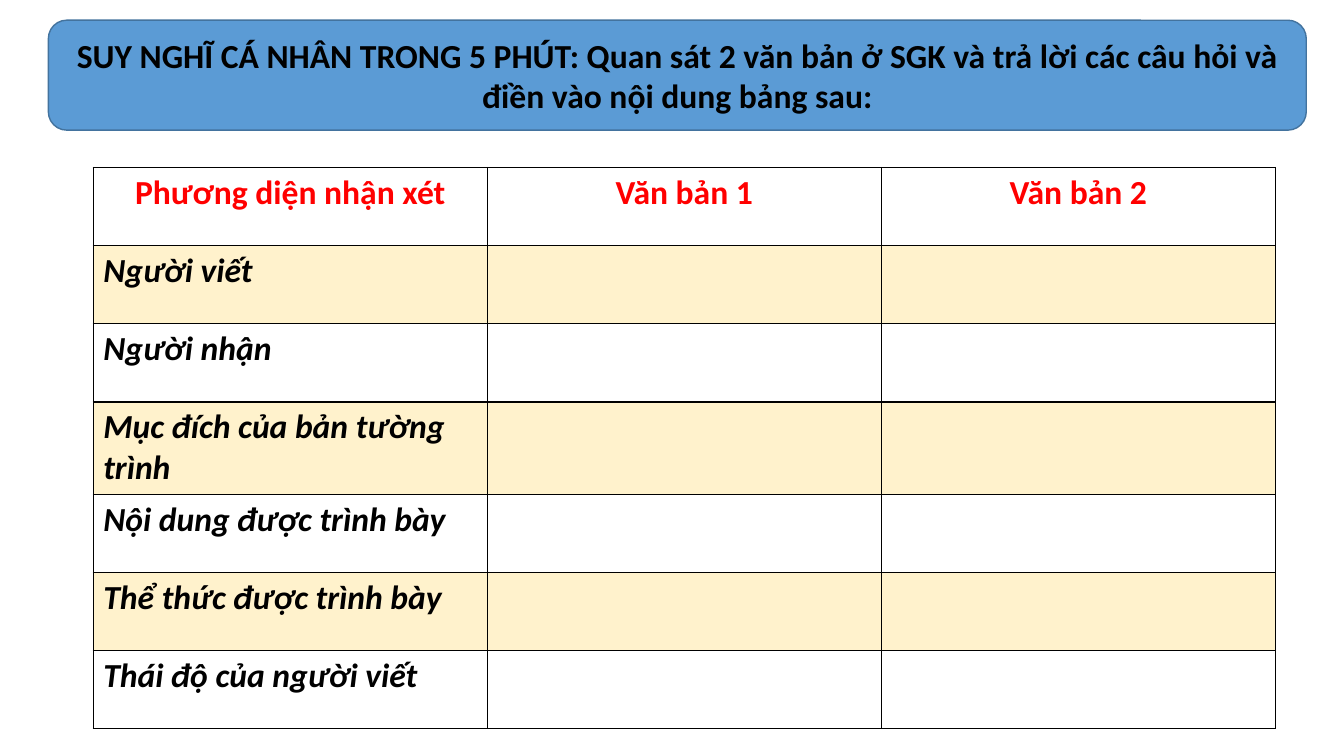
import pptx
import pptx.util
import pptx.dml.color
import pptx.enum.shapes
import pptx.enum.text
import pptx.oxml
import pptx.oxml.ns
from pptx.util import Cm

# Content
TITLE = ("SUY NGHĨ CÁ NHÂN TRONG 5 PHÚT: Quan sát 2 văn bản ở SGK "
         "và trả lời các câu hỏi và điền vào nội dung bảng sau:")
HEADS = ["Phương diện nhận xét", "Văn bản 1", "Văn bản 2"]
ASPECTS = [
    "Người viết",
    "Người nhận",
    "Mục đích của bản tường trình",
    "Nội dung được trình bày",
    "Thể thức được trình bày",
    "Thái độ của người viết",
]
BLACK, RED, AMBER = "000000", "FF0000", "FFC000"
COL_W, ROW_H = Cm(9.93), Cm(1.97)
ALIGN = pptx.enum.text.PP_ALIGN


def color(code):
    return pptx.dml.color.RGBColor.from_string(code)


def write(frame, text, ink=BLACK, italic=False, align=ALIGN.LEFT):
    para = frame.paragraphs[0]
    para.alignment = align
    run = para.add_run()
    run.text = text
    font = run.font
    font.name, font.size = "Calibri", pptx.util.Pt(24)
    font.bold, font.italic = True, italic
    font.color.rgb = color(ink)


def border(cell):
    props = cell._tc.get_or_add_tcPr()
    for spot, side in enumerate(("lnL", "lnR", "lnT", "lnB")):
        props.insert(spot, pptx.oxml.parse_xml(
            f'<a:{side} {pptx.oxml.ns.nsdecls("a")} w="12700"><a:solidFill>'
            f'<a:srgbClr val="{BLACK}"/></a:solidFill></a:{side}>'))


def tint(cell, code, share):
    cell.fill.solid()
    cell.fill.fore_color.rgb = color(code)
    tone = cell._tc.tcPr.find(".//" + pptx.oxml.ns.qn("a:srgbClr"))
    tone.append(pptx.oxml.parse_xml(
        f'<a:alpha {pptx.oxml.ns.nsdecls("a")} val="{share * 1000}"/>'))


deck = pptx.Presentation()
deck.slide_width, deck.slide_height = Cm(33.87), Cm(19.05)
slide = deck.slides.add_slide(deck.slide_layouts[6])

# Title banner
banner = slide.shapes.add_shape(
    pptx.enum.shapes.MSO_SHAPE.ROUNDED_RECTANGLE,
    Cm(1.22), Cm(0.51), Cm(31.7), Cm(2.77))
banner.shadow.inherit = False
banner.fill.solid()
banner.fill.fore_color.rgb = color("5B9BD5")
banner.line.color.rgb = color("43739E")
banner.line.width = pptx.util.Pt(1)
banner.text_frame.word_wrap = True
banner.text_frame.vertical_anchor = pptx.enum.text.MSO_ANCHOR.MIDDLE
write(banner.text_frame, TITLE, align=ALIGN.CENTER)

# Comparison table
count, width = len(ASPECTS) + 1, len(HEADS)
table = slide.shapes.add_table(
    count, width, Cm(2.35), Cm(4.22), COL_W * width, ROW_H * count).table
table.first_row = table.horz_banding = False
for col in table.columns:
    col.width = COL_W
for r, row in enumerate(table.rows):
    row.height = ROW_H
    for cell in row.cells:
        if r % 2:
            tint(cell, AMBER, 20)
        else:
            cell.fill.background()
        border(cell)

for c, head in enumerate(HEADS):
    write(table.cell(0, c).text_frame, head, ink=RED, align=ALIGN.CENTER)
for r, aspect in enumerate(ASPECTS, 1):
    write(table.cell(r, 0).text_frame, aspect, italic=True)

deck.save("out.pptx")
